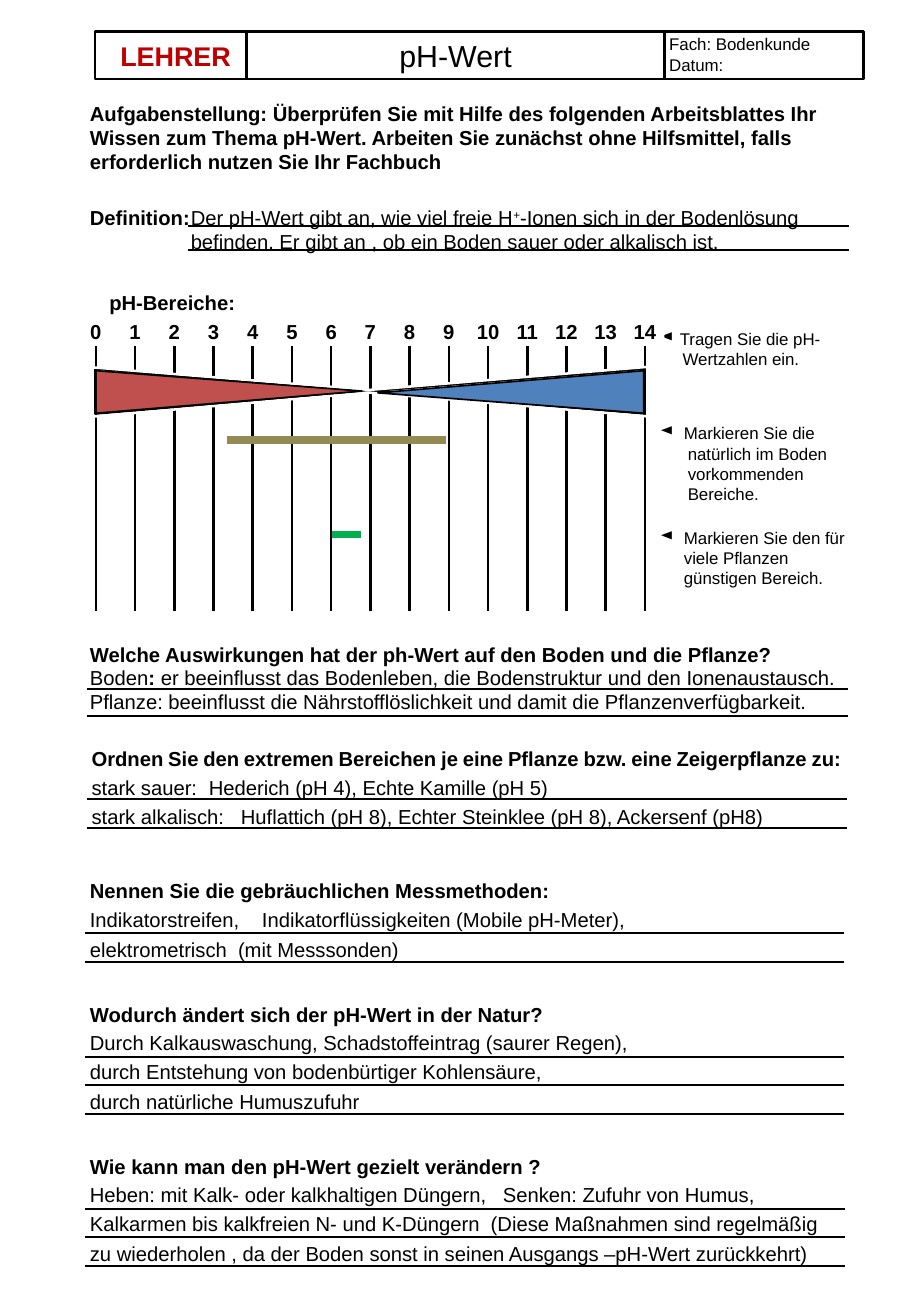
from lxml.etree import SubElement
from pptx import Presentation
from pptx.dml.color import RGBColor
from pptx.enum.shapes import MSO_CONNECTOR, MSO_SHAPE
from pptx.enum.text import MSO_ANCHOR, PP_ALIGN
from pptx.oxml.ns import qn
from pptx.util import Pt

BLACK, WHITE = "000000", "FFFFFF"
TEXT_SIZE, NOTE_SIZE = 12, 10
INSET = (2.88, 1.44)

HEADER = [
    ((56.2, 18.7, 95.8, 28.1), ["LEHRER"], 16, True, "C00000"),
    ((146.2, 18.7, 247.7, 28.1), ["pH-Wert"], 18, False, BLACK),
]
SUBJECT = ((393.8, 18.7, 118.1, 28.1), ["Fach: Bodenkunde", "Datum:"])
TASK = ((50.4, 58.3, 461.5, 50.4), [
    "Aufgabenstellung: Überprüfen Sie mit Hilfe des folgenden Arbeitsblattes Ihr "
    "Wissen zum Thema pH-Wert. Arbeiten Sie zunächst ohne Hilfsmittel, falls "
    "erforderlich nutzen Sie Ihr Fachbuch"])
DEFINITION_LABEL = ((50.4, 120.2, 466.6, 50.4), ["Definition:"])
DEFINITION = ((110.2, 120.2, 407.5, 36), [[
    ("Der pH-Wert gibt an, wie viel freie H", {}),
    ("+", {"raised": True}),
    ("-Ionen sich in der Bodenlösung befinden. Er gibt an , ob ein Boden sauer "
     "oder alkalisch ist.", {})]])
RANGES_LABEL = ((61.9, 170.6, 478.1, 22.3), ["pH-Bereiche:"])

NOTES = [
    ((388.1, 193, 129.6, 39.6),
     [("Tragen Sie die pH-", 12), ("Wertzahlen ein.", 13.7)]),
    ((388.1, 249.1, 151.9, 56.2),
     [("Markieren Sie die", 14.4), ("natürlich im Boden", 16.7),
      ("vorkommenden", 16.7), ("Bereiche.", 16.7)]),
    ((388.1, 311, 151.9, 50.4),
     [("Markieren Sie den für", 14.4), ("viele Pflanzen", 14.4),
      ("günstigen Bereich.", 14.4)]),
]

PLANT_WORDS = ("Ordnen Sie den extremen Bereichen je eine Pflanze bzw. "
               "eine Zeigerpflanze zu:").split()
PLANT_HEADING = [(PLANT_WORDS[0], {})]
for word in PLANT_WORDS[1:]:
    PLANT_HEADING += [(" ", {"size": NOTE_SIZE}), (word, {})]

QUESTIONS = [
    {"heading": "Welche Auswirkungen hat der ph-Wert auf den Boden und die Pflanze?",
     "left": 50.4, "tops": (379.4, 392.6), "gap": 0, "tabs": [],
     "answers": [[("Boden", {}), (": ", {"bold": True}),
                  ("er beeinflusst das Bodenleben, die Bodenstruktur und den "
                   "Ionenaustausch.", {})],
                 "Pflanze: beeinflusst die Nährstofflöslichkeit und damit die "
                 "Pflanzenverfügbarkeit."]},
    {"heading": PLANT_HEADING,
     "left": 51.4, "tops": (440.6, 457.9), "gap": 3, "tabs": [69.5, 88.5],
     "answers": ["stark sauer:\tHederich (pH 4), Echte Kamille (pH 5)",
                 "stark alkalisch:\tHuflattich (pH 8), Echter Steinklee (pH 8), "
                 "Ackersenf (pH8)"]},
    {"heading": "Nennen Sie die gebräuchlichen Messmethoden:",
     "left": 50.4, "tops": (519.1, 536.4), "gap": 3, "tabs": [102, 87.8],
     "answers": ["Indikatorstreifen,\tIndikatorflüssigkeiten (Mobile pH-Meter),",
                 "elektrometrisch\t(mit Messsonden)"]},
    {"heading": "Wodurch ändert sich der pH-Wert in der Natur?",
     "left": 50.4, "tops": (592.6, 609.1), "gap": 3, "tabs": [],
     "answers": ["Durch Kalkauswaschung, Schadstoffeintrag (saurer Regen),",
                 "durch Entstehung von bodenbürtiger Kohlensäure,",
                 "durch natürliche Humuszufuhr"]},
    {"heading": "Wie kann man den pH-Wert gezielt verändern ?",
     "left": 50.4, "tops": (682.6, 699.1), "gap": 3, "tabs": [244.8, 237.6],
     "answers": ["Heben: mit Kalk- oder kalkhaltigen Düngern,\tSenken: Zufuhr von Humus,",
                 "Kalkarmen bis kalkfreien N- und K-Düngern\t(Diese Maßnahmen sind "
                 "regelmäßig",
                 "zu wiederholen , da der Boden sonst in seinen Ausgangs –pH-Wert "
                 "zurückkehrt)"]},
]
UNDERLINES = [
    (111.6, 503.3, (133.9, 148.3)),
    (51.8, 502.6, (408.2, 424.1)),
    (51.8, 501.8, (473.4, 490.7)),
    (50.4, 500.4, (553, 570.2)),
    (50.4, 500.4, (626.4, 643, 660.2)),
    (50.4, 501.1, (716.4, 733, 750.2)),
]

PH_VALUES = range(15)
SCALE_LEFT, SCALE_STEP = 56.8, 23.25
LABEL_TOP, LABEL_HEIGHT, TICK_BOTTOM = 187.2, 18, 362.2
WEDGES = [
    (MSO_SHAPE.FLOWCHART_COLLATE, (205.9, 69.1, 26.6, 325.4), 90, None, WHITE, 1.5),
    (MSO_SHAPE.ISOSCELES_TRIANGLE, (123.1, 153.4, 25.2, 157.7), 90, 0.48, "C0504D", 1),
    (MSO_SHAPE.ISOSCELES_TRIANGLE, (290.2, 153.4, 25.2, 157.7), 270, 0.48, "4F81BD", 1),
]
WEDGE_GAPS = [
    [(51.1, 217.4), (218.9, 231.1), (383.8, 217.4)],
    [(54, 247), (218.2, 232.6), (386.6, 247)],
]
RANGES = [(134.6, 264.2, 260.6, "948A54"), (196.6, 213.8, 316.8, "00B050")]

prs = Presentation()
prs.slide_width, prs.slide_height = Pt(540), Pt(779.8)
slide = prs.slides.add_slide(prs.slide_layouts[6])
shapes = slide.shapes


def color(value):
    return RGBColor.from_string(value)


def style(shape, fill=None, line=None, width=1.5):
    shape.shadow.inherit = False
    if fill:
        shape.fill.solid()
        shape.fill.fore_color.rgb = color(fill)
    else:
        shape.fill.background()
    if line:
        shape.line.color.rgb = color(line)
        shape.line.width = Pt(width)
    else:
        shape.line.fill.background()


def add_box(place, paragraphs, size=TEXT_SIZE, bold=False, ink=BLACK, fill=WHITE,
            line=None, align=PP_ALIGN.LEFT, anchor=MSO_ANCHOR.TOP, inset=INSET, gap=0):
    box = shapes.add_shape(MSO_SHAPE.RECTANGLE, *map(Pt, place))
    style(box, fill, line)
    frame = box.text_frame
    frame.word_wrap = True
    frame.vertical_anchor = anchor
    frame.margin_left = frame.margin_right = Pt(inset[0])
    frame.margin_top = frame.margin_bottom = Pt(inset[1])
    for i, runs in enumerate(paragraphs):
        paragraph = frame.add_paragraph() if i else frame.paragraphs[0]
        paragraph.alignment = align
        if i and gap:
            paragraph.space_before = Pt(gap)
        for text, look in [(runs, {})] if isinstance(runs, str) else runs:
            run = paragraph.add_run()
            run.text = text
            run.font.name = "Arial"
            run.font.size = Pt(look.get("size", size))
            run.font.bold = look.get("bold", bold)
            run.font.color.rgb = color(ink)
            if look.get("raised"):
                run._r.get_or_add_rPr().set("baseline", "30000")
    return box


def add_line(x1, y1, x2, y2, ink=BLACK, width=1.0):
    line = shapes.add_connector(MSO_CONNECTOR.STRAIGHT, *map(Pt, (x1, y1, x2, y2)))
    line.line.color.rgb = color(ink)
    line.line.width = Pt(width)
    SubElement(line._element.spPr, qn("a:effectLst"))
    return line


for place, title, size, bold, ink in HEADER:
    add_box(place, title, size, bold, ink, line=BLACK, align=PP_ALIGN.CENTER,
            anchor=MSO_ANCHOR.MIDDLE, inset=(7.2, 3.6))
add_box(*SUBJECT, size=NOTE_SIZE, line=BLACK)
add_box(*TASK, bold=True, line=WHITE)
add_box(*DEFINITION_LABEL, bold=True)
add_box(*DEFINITION, fill=None)
add_box(*RANGES_LABEL, bold=True)

for place, note_lines in NOTES:
    note = add_box(place, [text for text, _ in note_lines], NOTE_SIZE)
    for i, (_, indent) in enumerate(note_lines):
        props = note.text_frame.paragraphs[i]._p.get_or_add_pPr()
        props.set("marL", str(Pt(indent)))
        props.set("indent", str(0 if i else -Pt(indent)))
        if i == 0:
            SubElement(props, qn("a:buChar"), char="◄")

for value in PH_VALUES:
    x = SCALE_LEFT + value * SCALE_STEP
    label = add_box((x - SCALE_STEP / 2, LABEL_TOP, SCALE_STEP, LABEL_HEIGHT), [str(value)],
                    bold=True, align=PP_ALIGN.CENTER, anchor=MSO_ANCHOR.BOTTOM)
    tick = add_line(x, LABEL_TOP + LABEL_HEIGHT, x, TICK_BOTTOM, width=1.5)
    tick.begin_connect(label, 2)

for kind, place, rotation, apex, fill, width in WEDGES:
    wedge = shapes.add_shape(kind, *map(Pt, place))
    wedge.rotation = rotation
    style(wedge, fill, BLACK, width)
    if apex:
        wedge.adjustments[0] = apex
    else:
        for start, *rest in WEDGE_GAPS:
            outline = shapes.build_freeform(*map(Pt, start), scale=1.0)
            outline.add_line_segments([(Pt(x), Pt(y)) for x, y in rest], close=False)
            style(outline.convert_to_shape(), line=WHITE)

for x1, x2, y, ink in RANGES:
    add_line(x1, y, x2, y, ink, 4.5)

for question in QUESTIONS:
    left, (heading_top, answer_top) = question["left"], question["tops"]
    answers = question["answers"]
    add_box((left, heading_top, 461.5, 17), [question["heading"]], bold=True)
    block = add_box((left, answer_top, 466.6, 17 * len(answers)), answers, fill=None,
                    gap=question["gap"])
    for paragraph, stop in zip(block.text_frame.paragraphs, question["tabs"]):
        tabs = SubElement(paragraph._p.get_or_add_pPr(), qn("a:tabLst"))
        SubElement(tabs, qn("a:tab"), pos=str(Pt(stop)), algn="l")

for x1, x2, heights in UNDERLINES:
    for y in heights:
        add_line(x1, y, x2, y)

prs.save("out.pptx")
